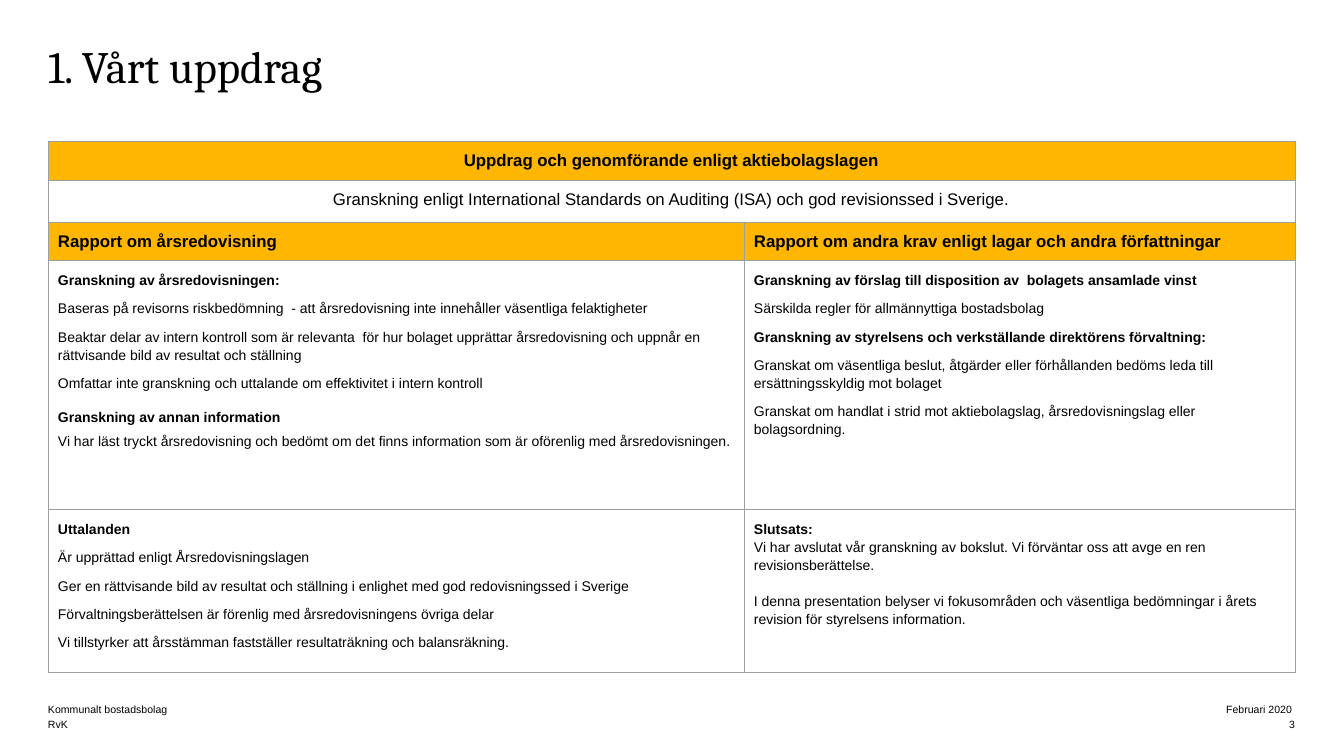
import pptx
import pptx.util
import pptx.dml.color
import pptx.enum.text
import pptx.oxml
import pptx.oxml.ns

ALIGN = pptx.enum.text.PP_ALIGN
ANCHOR = pptx.enum.text.MSO_ANCHOR
BLACK = pptx.dml.color.RGBColor(0x00, 0x00, 0x00)
AMBER = pptx.dml.color.RGBColor(0xFF, 0xB6, 0x00)
GREY = pptx.dml.color.RGBColor(0x9E, 0x9E, 0x9E)

# Content
TITLE = "1. Vårt uppdrag"
FOOTERS = [  # text, left, top, width, alignment
    ("Kommunalt bostadsbolag", 48, 701, 604, ALIGN.LEFT),
    ("RvK", 48, 716, 604, ALIGN.LEFT),
    ("Februari 2020 ", 906, 701, 389, ALIGN.RIGHT),
    ("3", 906, 716, 389, ALIGN.RIGHT),
]
BANNERS = [  # text, bold, fill
    ("Uppdrag och genomförande enligt aktiebolagslagen", True, AMBER),
    ("Granskning enligt International Standards on Auditing (ISA) och god "
     "revisionssed i Sverige.", False, None),
]
HEADINGS = ["Rapport om årsredovisning",
            "Rapport om andra krav enligt lagar och andra författningar"]
GAP = 7.4  # points between the paragraphs of a cell
DETAILS = [  # rows of cells; paragraph: text, bold, space before, space after
    [
        [("Granskning av årsredovisningen:", True, 0, GAP),
         ("Baseras på revisorns riskbedömning  - att årsredovisning inte innehåller "
          "väsentliga felaktigheter", False, 0, GAP),
         ("Beaktar delar av intern kontroll som är relevanta  för hur bolaget upprättar "
          "årsredovisning och uppnår en rättvisande bild av resultat och ställning",
          False, 0, GAP),
         ("Omfattar inte granskning och uttalande om effektivitet i intern kontroll",
          False, 0, GAP),
         ("Granskning av annan information", True, 4, 0),
         ("Vi har läst tryckt årsredovisning och bedömt om det finns information som är "
          "oförenlig med årsredovisningen.", False, 4, 0)],
        [("Granskning av förslag till disposition av  bolagets ansamlade vinst",
          True, 0, GAP),
         ("Särskilda regler för allmännyttiga bostadsbolag", False, 0, GAP),
         ("Granskning av styrelsens och verkställande direktörens förvaltning:",
          True, 0, GAP),
         ("Granskat om väsentliga beslut, åtgärder eller förhållanden bedöms leda till "
          "ersättningsskyldig mot bolaget", False, 0, GAP),
         ("Granskat om handlat i strid mot aktiebolagslag, årsredovisningslag eller "
          "bolagsordning.", False, 0, 0)],
    ],
    [
        [("Uttalanden", True, 0, GAP),
         ("Är upprättad enligt Årsredovisningslagen", False, 0, GAP),
         ("Ger en rättvisande bild av resultat och ställning i enlighet med god "
          "redovisningssed i Sverige", False, 0, GAP),
         ("Förvaltningsberättelsen är förenlig med årsredovisningens övriga delar",
          False, 0, GAP),
         ("Vi tillstyrker att årsstämman fastställer resultaträkning och "
          "balansräkning.", False, 0, 0)],
        [("Slutsats:", True, 0, 0),
         ("Vi har avslutat vår granskning av bokslut. Vi förväntar oss att avge en ren "
          "revisionsberättelse.", False, 0, 13),
         ("I denna presentation belyser vi fokusområden och väsentliga bedömningar i "
          "årets revision för styrelsens information.", False, 0, 0)],
    ],
]
COLUMN_WIDTHS = [696, 551]
ROW_HEIGHTS = [39, 42, 38, 249, 163]
TABLE_LEFT, TABLE_TOP = 48, 141
CELL_INSET = 10
EMU_PER_PX = 914400 / 100.8


def px(length):
    return pptx.util.Emu(round(length * EMU_PER_PX))


def apply(target, values):
    for name, value in values.items():
        setattr(target, name, value)


def set_insets(target, inset):
    apply(target, {"margin_" + side: px(inset)
                   for side in ("left", "top", "right", "bottom")})


def write(paragraph, text, size, font="Arial", bold=False, **layout):
    run = paragraph.add_run()
    run.text = text
    apply(run.font, {"size": pptx.util.Pt(size), "name": font, "bold": bold})
    run.font.color.rgb = BLACK
    apply(paragraph, layout)


def format_cell(cell, fill=None):
    set_insets(cell, CELL_INSET)
    properties = cell._tc.get_or_add_tcPr()
    for side in ("lnL", "lnR", "lnT", "lnB"):
        properties.append(pptx.oxml.parse_xml(
            f'<a:{side} {pptx.oxml.ns.nsdecls("a")} w="{pptx.util.Pt(0.75)}">'
            f'<a:solidFill><a:srgbClr val="{GREY}"/></a:solidFill></a:{side}>'))
    if fill is None:
        cell.fill.background()
    else:
        cell.fill.solid()
        cell.fill.fore_color.rgb = fill


presentation = pptx.Presentation()
apply(presentation, {"slide_width": px(1344), "slide_height": px(756)})
slide = presentation.slides.add_slide(presentation.slide_layouts[5])

# Title
title = slide.shapes.title
apply(title, {"left": px(48), "top": px(47), "width": px(1246), "height": px(88)})
apply(title.text_frame, {"vertical_anchor": ANCHOR.TOP, "word_wrap": True,
                         "auto_size": pptx.enum.text.MSO_AUTO_SIZE.NONE})
set_insets(title.text_frame, 0)
write(title.text_frame.paragraphs[0], TITLE, 32, "Cambria",
      alignment=ALIGN.LEFT, line_spacing=0.85)

# Table frame
table = slide.shapes.add_table(
    len(ROW_HEIGHTS), len(COLUMN_WIDTHS), px(TABLE_LEFT), px(TABLE_TOP),
    px(sum(COLUMN_WIDTHS)), px(sum(ROW_HEIGHTS))).table
apply(table, {"first_row": False, "horz_banding": False})
for column, width in zip(table.columns, COLUMN_WIDTHS):
    column.width = px(width)
for row, height in zip(table.rows, ROW_HEIGHTS):
    row.height = px(height)

# Full-width banners
for row_index, (text, bold, fill) in enumerate(BANNERS):
    first, last = table.cell(row_index, 0), table.cell(row_index, 1)
    first.merge(last)
    for cell in (first, last):
        format_cell(cell, fill)
    write(first.text_frame.paragraphs[0], text, 12, bold=bold, alignment=ALIGN.CENTER)

# Column headings
for column_index, text in enumerate(HEADINGS):
    cell = table.cell(len(BANNERS), column_index)
    format_cell(cell, AMBER)
    write(cell.text_frame.paragraphs[0], text, 12, bold=True)

# Detail cells
for row_index, cells in enumerate(DETAILS, len(BANNERS) + 1):
    for column_index, entries in enumerate(cells):
        cell = table.cell(row_index, column_index)
        format_cell(cell)
        frame = cell.text_frame
        for index, (text, bold, before, after) in enumerate(entries):
            paragraph = frame.add_paragraph() if index else frame.paragraphs[0]
            write(paragraph, text, 10, bold=bold, line_spacing=1.15,
                  space_before=pptx.util.Pt(before), space_after=pptx.util.Pt(after))

# Footer lines
for text, left, top, width, alignment in FOOTERS:
    frame = slide.shapes.add_textbox(px(left), px(top), px(width), px(15)).text_frame
    apply(frame, {"word_wrap": True, "vertical_anchor": ANCHOR.BOTTOM})
    set_insets(frame, 0)
    write(frame.paragraphs[0], text, 7.5, alignment=alignment)

presentation.save("out.pptx")
